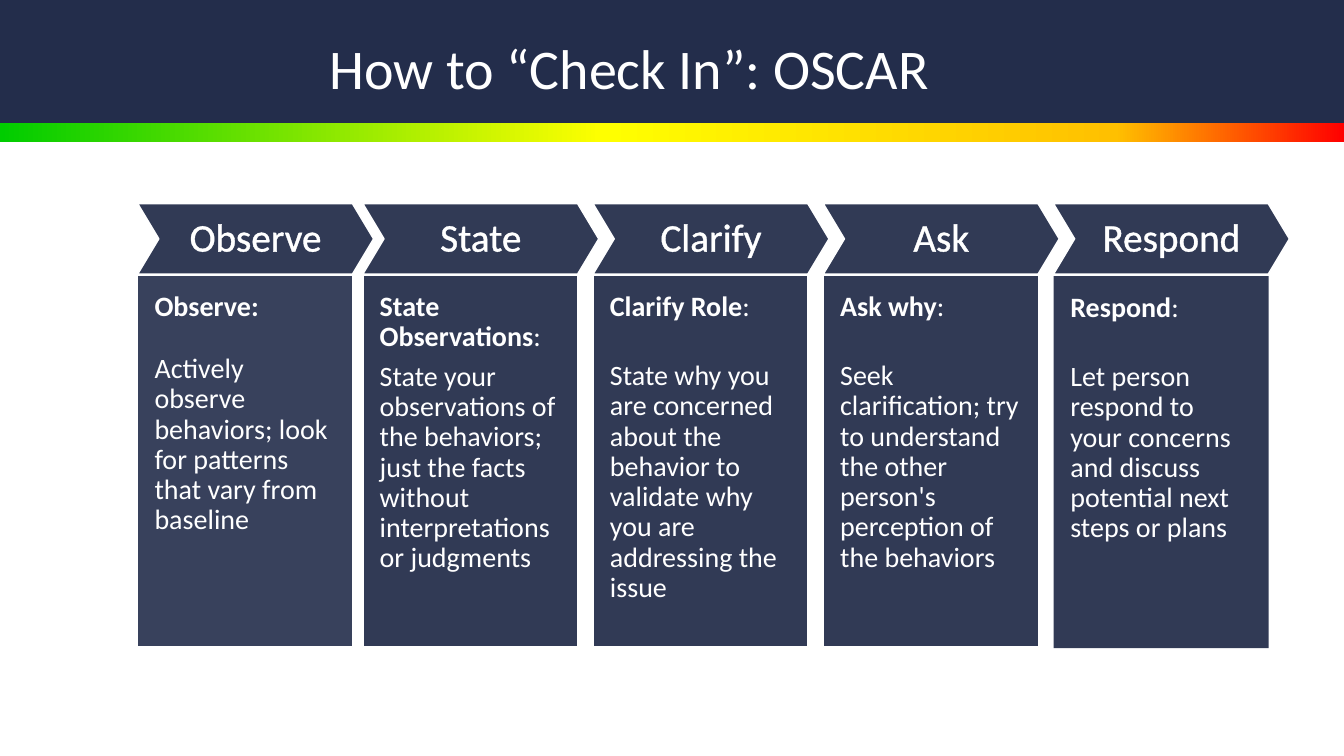
import pptx
import pptx.util
import pptx.dml.color
import pptx.enum.shapes
import pptx.enum.text
import pptx.oxml
import pptx.oxml.ns

Pt = pptx.util.Pt
Kind = pptx.enum.shapes.MSO_SHAPE
Align = pptx.enum.text.PP_ALIGN
Anchor = pptx.enum.text.MSO_ANCHOR
NS = pptx.oxml.ns.nsdecls("a")


def color(code):
    return pptx.dml.color.RGBColor.from_string(code)


class Deck:
    font = "Calibri"
    white = "FFFFFF"
    navy = "232D4B"
    slate = "313A55"

    def __init__(self):
        self.prs = pptx.Presentation()
        self.prs.slide_width = pptx.util.Inches(13.33)
        self.prs.slide_height = pptx.util.Inches(7.5)
        self.col = self.prs.slide_width / 100
        self.row = self.prs.slide_height / 75
        self.slide = self.prs.slides.add_slide(self.prs.slide_layouts[5])

    def place(self, x, y, w, h):
        return (round(x * self.col), round(y * self.row),
                round(w * self.col), round(h * self.row))

    def shape(self, kind, box, fill, line=None):
        shape = self.slide.shapes.add_shape(kind, *self.place(*box))
        shape.shadow.inherit = False
        shape.fill.solid()
        shape.fill.fore_color.rgb = color(fill)
        if line:
            shape.line.color.rgb = color(line)
            shape.line.width = Pt(1)
        else:
            shape.line.fill.background()
        return shape

    def blend(self, box, stops):
        bar = self.shape(Kind.RECTANGLE, box, self.white)
        bar.fill.gradient()
        bar.fill.gradient_angle = 0
        items = bar.element.spPr.find(".//" + pptx.oxml.ns.qn("a:gsLst"))
        for stop in list(items):
            items.remove(stop)
        for share, code in stops:
            items.append(pptx.oxml.parse_xml(
                f'<a:gs {NS} pos="{share * 1000}"><a:srgbClr val="{code}"/></a:gs>'))

    def style(self, para, size, align):
        para.alignment = align
        para.line_spacing = 0.9
        for run in para.runs:
            run.font.name = self.font
            run.font.size = Pt(size)
            run.font.bold = False
            run.font.color.rgb = color(self.white)

    def inset(self, frame, side, base):
        frame.word_wrap = True
        frame.margin_left = frame.margin_right = frame.margin_top = Pt(side)
        frame.margin_bottom = Pt(base)

    def title(self, text, box):
        title = self.slide.shapes.title
        title.left, title.top, title.width, title.height = self.place(*box)
        frame = title.text_frame
        frame.text = text
        frame.vertical_anchor = Anchor.MIDDLE
        self.style(frame.paragraphs[0], 40, Align.CENTER)
        title.element.getparent().append(title.element)

    def arrow(self, text, box):
        arrow = self.shape(Kind.CHEVRON, box, self.slate, self.white)
        arrow.adjustments[0] = 0.3
        frame = arrow.text_frame
        self.inset(frame, 6.5, 6.5)
        frame.text = text
        frame.vertical_anchor = Anchor.MIDDLE
        para = frame.paragraphs[0]
        self.style(para, 28, Align.CENTER)
        para.runs[0].font._element.insert(0, pptx.oxml.parse_xml(
            f'<a:ln {NS} w="9525"><a:solidFill><a:srgbClr val="{self.white}"/>'
            '</a:solidFill></a:ln>'))

    def card(self, head, mark, body, gap, box, fill, line, alpha):
        card = self.shape(Kind.RECTANGLE, box, fill, line)
        if alpha < 100:
            tint = card.element.spPr.find(
                pptx.oxml.ns.qn("a:solidFill") + "/" + pptx.oxml.ns.qn("a:srgbClr"))
            tint.append(pptx.oxml.parse_xml(f'<a:alpha {NS} val="{alpha * 1000}"/>'))
        frame = card.text_frame
        self.inset(frame, 12, 24)
        frame.vertical_anchor = Anchor.TOP
        first = frame.paragraphs[0]
        for part in filter(None, (head, mark)):
            first.add_run().text = part
        self.style(first, 20, Align.LEFT)
        first.runs[0].font.bold = True
        first.space_after = Pt(gap)
        last = frame.add_paragraph()
        last.text = body
        self.style(last, 20, Align.LEFT)


STEPS = [
    ("Observe", "Observe:", "",
     "Actively observe behaviors; look for patterns that vary from baseline", 23),
    ("State", "State Observations", ":",
     "State your observations of the behaviors; just the facts without "
     "interpretations or judgments", 7),
    ("Clarify", "Clarify Role", ":",
     "State why you are concerned about the behavior to validate why you are "
     "addressing the issue", 28),
    ("Ask", "Ask why", ":",
     "Seek clarification; try to understand the other person's perception of "
     "the behaviors", 28),
    ("Respond", "Respond", ":",
     "Let person respond to your concerns and discuss potential next steps or plans", 28),
]


def main():
    deck = Deck()
    deck.blend((0, 12.2, 100, 1.9),
               [(0, "00CC00"), (45, "FFFF00"), (83, "FFC000"), (100, "FF0000")])
    deck.shape(Kind.RECTANGLE, (0, 0, 100, 12.2), deck.navy)
    deck.title("How to “Check In”: OSCAR", (6.9, -0.2, 79.8, 14.5))
    final = len(STEPS) - 1
    for i, (name, head, mark, body, gap) in enumerate(STEPS):
        x = max(10.25, 27 + 17.13 * (i - 1))
        deck.arrow(name, (x, 20.2, 17.55, 7))
        top = 27.4 if i == final else 27.3
        fill, alpha = (deck.navy, 90) if i == 0 else (deck.slate, 100)
        line = None if i == final else deck.white
        deck.card(head, mark, body, gap, (x, top, 16, 36.9), fill, line, alpha)
    deck.prs.save("out.pptx")


if __name__ == "__main__":
    main()
